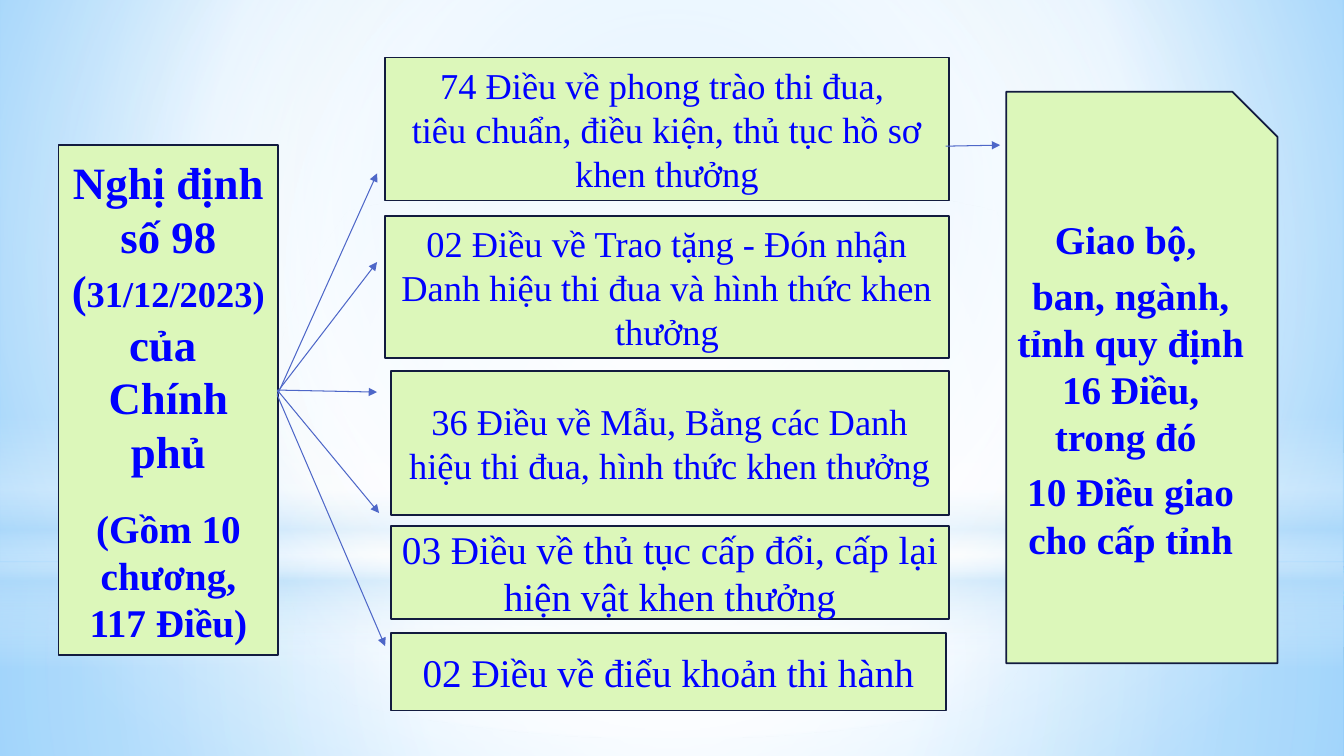
import pptx
import pptx.util
import pptx.oxml
import pptx.oxml.ns
import pptx.dml.color
import pptx.enum.shapes
import pptx.enum.text
from dataclasses import dataclass
from lxml import etree

Inches = pptx.util.Inches
Pt = pptx.util.Pt
qn = pptx.oxml.ns.qn
KIND = pptx.enum.shapes.MSO_SHAPE


@dataclass(frozen=True)
class Theme:
    font: str = "Times New Roman"
    ink: str = "0000FF"
    fill: str = "DCF7BA"
    edge: str = "121B3F"
    arrow: str = "4E67C8"
    white: str = "FFFFFF"
    pale: str = "B4DCFA"
    sky: str = "9ED5FF"
    deep: str = "5BB9FF"
    title: int = 32
    large: int = 28
    body: int = 26
    border: float = 1.25
    thin: float = 0.75


THEME = Theme()


def color(code):
    return pptx.dml.color.RGBColor.from_string(code)


def blend(parent, stops, focus=None):
    grad = etree.Element(qn("a:gradFill"), rotWithShape="1")
    items = etree.SubElement(grad, qn("a:gsLst"))
    for place, code, alpha in stops:
        stop = etree.SubElement(items, qn("a:gs"), pos=str(place * 1000))
        tint = etree.SubElement(stop, qn("a:srgbClr"), val=code)
        if alpha < 100:
            etree.SubElement(tint, qn("a:alpha"), val=str(alpha * 1000))
    if focus:
        path = etree.SubElement(grad, qn("a:path"), path="circle")
        sides = {side: str(part * 1000) for side, part in zip("ltrb", focus)}
        etree.SubElement(path, qn("a:fillToRect"), **sides)
    else:
        etree.SubElement(grad, qn("a:lin"), ang="5400000", scaled="0")
    parent.replace(parent.find(qn("a:solidFill")), grad)


def shape(slide, kind, area):
    item = slide.shapes.add_shape(kind, *map(Inches, area))
    item.shadow.inherit = False
    item.fill.solid()
    return item


def glow(slide, kind, top, height, stops, focus=None):
    item = shape(slide, kind, (0, top, 13.33, height))
    item.line.fill.background()
    blend(item.element.spPr, stops, focus)


def scene(slide):
    slide.background.fill.solid()
    base = slide.element.find(".//" + qn("p:bgPr"))
    white, pale = THEME.white, THEME.pale
    mid = (50, 50, 50, 50)
    blend(base, [(0, THEME.sky, 100), (60, white, 100), (100, THEME.deep, 100)],
          (20, 10, 20, 60))
    glow(slide, KIND.RECTANGLE, 5.58, 1.92,
         [(0, white, 91), (37, white, 76), (100, pale, 79)], mid)
    glow(slide, KIND.RECTANGLE, 0, 5.58,
         [(0, white, 89), (48, white, 62), (100, pale, 79)], mid)
    glow(slide, KIND.RECTANGLE, 4.12, 2.5,
         [(0, white, 0), (29, white, 30), (45, pale, 40),
          (55, white, 26), (65, pale, 60), (100, white, 0)])
    glow(slide, KIND.OVAL, 1.75, 5.58, [(0, white, 100), (56, white, 0)], mid)


def box(slide, area, paras, bold=False, gap=0, kind=KIND.RECTANGLE):
    item = shape(slide, kind, area)
    item.fill.fore_color.rgb = color(THEME.fill)
    item.line.color.rgb = color(THEME.edge)
    item.line.width = Pt(THEME.border)
    frame = item.text_frame
    frame.word_wrap = True
    frame.vertical_anchor = pptx.enum.text.MSO_ANCHOR.MIDDLE
    for index, parts in enumerate(paras):
        para = frame.add_paragraph() if index else frame.paragraphs[0]
        para.alignment = pptx.enum.text.PP_ALIGN.CENTER
        para.space_before = Pt(gap)
        for words, size in parts:
            run = para.add_run()
            run.text = words
            run.font.name = THEME.font
            run.font.size = Pt(size)
            run.font.bold = bold
            run.font.color.rgb = color(THEME.ink)
    return item


def arrow(slide, start, end):
    link = slide.shapes.add_connector(
        pptx.enum.shapes.MSO_CONNECTOR.STRAIGHT, *map(Inches, start + end))
    link.line.color.rgb = color(THEME.arrow)
    link.line.width = Pt(THEME.thin)
    etree.SubElement(link.line._get_or_add_ln(), qn("a:tailEnd"), type="triangle")
    etree.SubElement(link.element.spPr, qn("a:effectLst"))


def main():
    deck = pptx.Presentation()
    deck.slide_width, deck.slide_height = Inches(13.33), Inches(7.5)
    slide = deck.slides.add_slide(deck.slide_layouts[6])
    title, large, body = THEME.title, THEME.large, THEME.body
    scene(slide)

    decree = box(slide, (0.58, 1.44, 2.18, 5.06), [
        [("Nghị định số 98 (", title), ("31/12/2023)", body), (" của ", title)],
        [("Chính phủ", title)],
        [("(Gồm 10 chương, 117 Điều)", large)],
    ], bold=True)
    decree.text_frame.paragraphs[-1].space_before = Pt(19)

    topics = [
        ((3.82, 0.57, 5.59, 1.42), body,
         ["74 Điều về phong trào thi đua, ",
          "tiêu chuẩn, điều kiện, thủ tục hồ sơ khen thưởng"]),
        ((3.82, 2.14, 5.59, 1.41), body,
         ["02 Điều về Trao tặng - Đón nhận Danh hiệu thi đua và hình thức khen thưởng"]),
        ((3.88, 3.68, 5.53, 1.43), body,
         ["36 Điều về Mẫu, Bằng các Danh hiệu thi đua, hình thức khen thưởng"]),
        ((3.88, 5.22, 5.53, 0.92), large,
         ["03 Điều về thủ tục cấp đổi, cấp lại hiện vật khen thưởng"]),
        ((3.88, 6.28, 5.5, 0.77), large, ["02 Điều về điểu khoản thi hành"]),
    ]
    for area, size, lines in topics:
        box(slide, area, [[(words, size)] for words in lines])

    fan = [(3.92, 3.74, 1.72), (3.89, 3.74, 2.6), (3.87, 3.74, 3.89),
           (3.87, 3.76, 5.09), (3.92, 3.82, 6.41)]
    for start, left, top in fan:
        arrow(slide, (2.75, start), (left, top))
    arrow(slide, (9.38, 1.45), (9.92, 1.44))

    tasks = ["Giao bộ, ", "ban, ngành, tỉnh quy định 16 Điều, trong đó ",
             "10 Điều giao cho cấp tỉnh"]
    box(slide, (9.98, 0.91, 2.69, 5.67), [[(words, large)] for words in tasks],
        bold=True, gap=6, kind=KIND.SNIP_1_RECTANGLE)

    deck.save("out.pptx")


if __name__ == "__main__":
    main()
